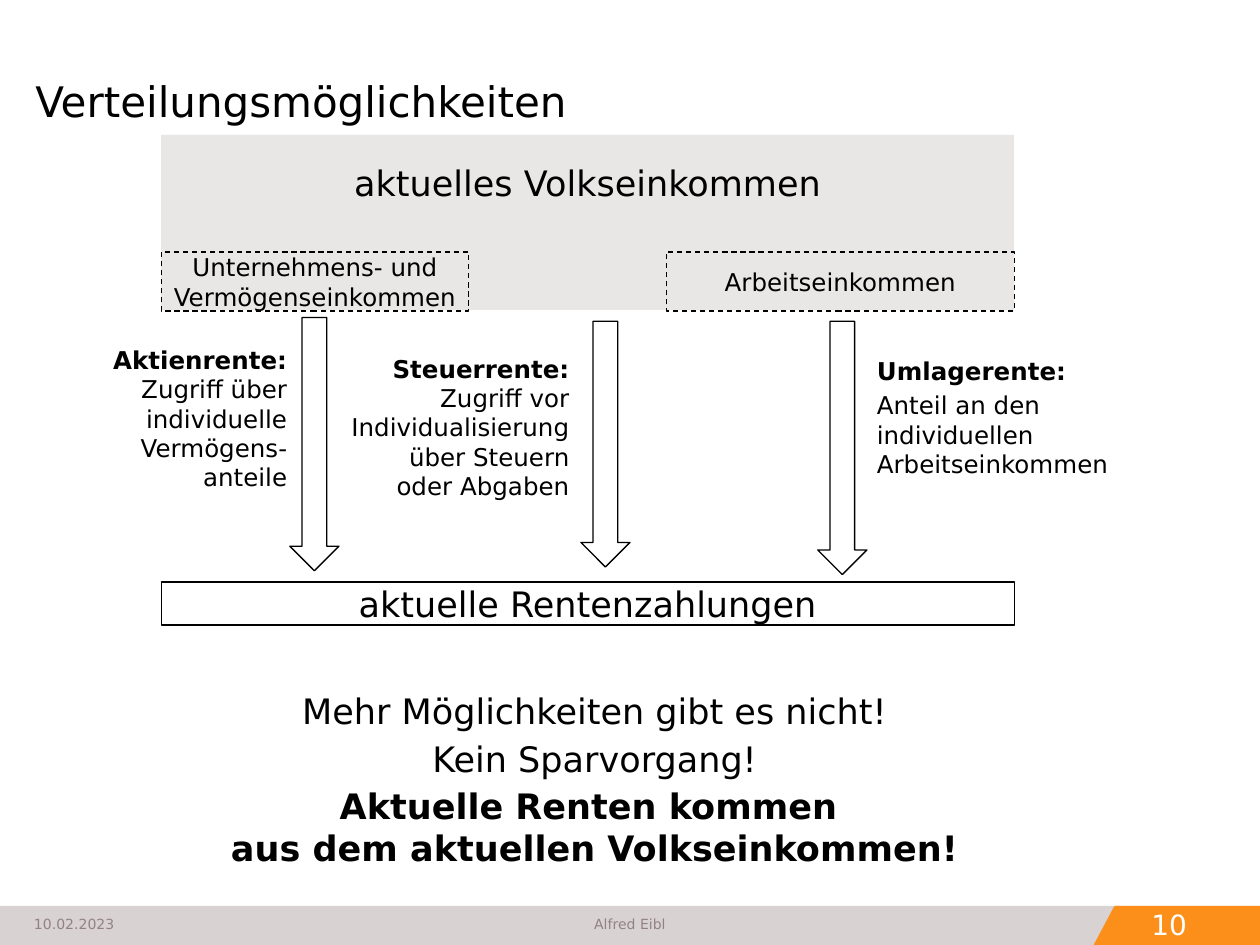
from dataclasses import dataclass
from pptx import Presentation
from pptx.dml.color import RGBColor as RGB
from pptx.enum.dml import MSO_LINE as Dash
from pptx.enum.shapes import MSO_SHAPE as Kind
from pptx.enum.text import MSO_ANCHOR as Anchor, MSO_AUTO_SIZE as Fit, PP_ALIGN as Align
from pptx.util import Inches, Pt


@dataclass(frozen=True)
class Theme:
    font: str = "DejaVu Sans"
    ink: str = "000000"
    mute: str = "928285"
    white: str = "FFFFFF"
    bar: str = "D8D2D2"
    accent: str = "FB8F19"
    panel: str = "E9E6E6"
    head: int = 24
    big: int = 20
    page: int = 16
    body: int = 14
    foot: int = 8


look = Theme()
deck = Presentation()
deck.slide_width, deck.slide_height = Inches(10), Inches(7.5)
col, row = deck.slide_width / 100, deck.slide_height / 75
slide = deck.slides.add_slide(deck.slide_layouts[5])
shapes = slide.shapes


def draw(kind, x, y, w, h, fill=None, dash=None):
    """Add a shape on the grid: filled without a line, or outlined without a fill."""
    box = shapes.add_shape(kind, int(x * col), int(y * row), int(w * col), int(h * row))
    box.shadow.inherit = False
    if fill:
        box.fill.solid()
        box.fill.fore_color.rgb = RGB.from_string(fill)
        box.line.fill.background()
    else:
        box.fill.background()
        box.line.color.rgb = RGB.from_string(look.ink)
        box.line.width = Pt(0.75)
        if dash:
            box.line.dash_style = dash
    return box


def write(box, paras, size, align=Align.CENTER, anchor=Anchor.MIDDLE, tint=look.ink, after=3):
    """Fill a box; each paragraph is a list of lines, and * marks a bold line."""
    frame = box.text_frame
    frame.auto_size, frame.word_wrap = Fit.NONE, True
    frame.vertical_anchor = anchor
    frame.margin_left = frame.margin_right = frame.margin_top = frame.margin_bottom = 0
    for i, lines in enumerate(paras):
        para = frame.add_paragraph() if i else frame.paragraphs[0]
        para.alignment, para.space_after = align, Pt(after)
        para.font.name, para.font.size = look.font, Pt(size)
        para.font.color.rgb = RGB.from_string(tint)
        for j, line in enumerate(lines):
            if j:
                para.add_line_break()
            run = para.add_run()
            run.text = line.removeprefix("*")
            run.font.bold = line.startswith("*")


# Footer band and income panel
draw(Kind.RECTANGLE, 0, 71.9, 100, 3.1, look.bar)
draw(Kind.RECTANGLE, 88.5, 71.9, 11.5, 3.1, look.accent)
draw(Kind.ISOSCELES_TRIANGLE, 86.8, 71.9, 3.3, 3.1, look.accent)
left, wide = 12.8, 67.7
draw(Kind.RECTANGLE, left, 10.7, wide, 13.9, look.panel)

title = shapes.title
title.left, title.top = int(2.8 * col), int(2.1 * row)
title.width, title.height = int(79 * col), int(7.9 * row)
write(title, [["Verteilungsmöglichkeiten"]], look.head, Align.LEFT, Anchor.BOTTOM, after=0)

# Outlined boxes
for x, y, w, h, text, size, dash in [
    (52.9, 20, 27.6, 4.7, "Arbeitseinkommen", look.body, Dash.DASH),
    (left, 20, 24.4, 4.7, "Unternehmens- und Vermögenseinkommen", look.body, Dash.DASH),
    (left, 46.2, wide, 3.4, "aktuelle Rentenzahlungen", look.big, None),
]:
    write(draw(Kind.RECTANGLE, x, y, w, h, dash=dash), [[text]], size)

for x, y, h in [(46.1, 25.5, 19.5), (64.9, 25.5, 20.1), (23, 25.2, 20.1)]:
    draw(Kind.DOWN_ARROW, x, y, 3.9, h)

# Free text: place, paragraphs, size, alignment, colour
for place, paras, size, align, tint in [
    ((left, 12.8, wide, 3.4), [["aktuelles Volkseinkommen"]], look.big, Align.CENTER, look.ink),
    ((8.6, 27.3, 14.2, 11.8),
     [["*Aktienrente:", "Zugriff über individuelle Vermögens-anteile"]],
     look.body, Align.RIGHT, look.ink),
    ((69.6, 28.2, 21.3, 9.8),
     [["*Umlagerente:"], ["Anteil an den individuellen Arbeitseinkommen"]],
     look.body, Align.LEFT, look.ink),
    ((27.2, 28, 18, 11.8),
     [["*Steuerrente:", "Zugriff vor Individualisierung über Steuern", "oder Abgaben"]],
     look.body, Align.RIGHT, look.ink),
    ((4.3, 54.7, 85.8, 14.3),
     [["Mehr Möglichkeiten gibt es nicht!"], ["Kein Sparvorgang!"],
      ["*Aktuelle Renten kommen ", "*aus dem aktuellen Volkseinkommen!"]],
     look.big, Align.CENTER, look.ink),
]:
    x, y, w, h = place
    box = shapes.add_textbox(int(x * col), int(y * row), int(w * col), int(h * row))
    write(box, paras, size, align, tint=tint)

# Footer text
for x, w, text, size, align, tint in [
    (2.7, 8, "10.02.2023", look.foot, Align.LEFT, look.mute),
    (45, 10, "Alfred Eibl", look.foot, Align.CENTER, look.mute),
    (89.2, 5, "10", look.page, Align.RIGHT, look.white),
]:
    box = shapes.add_textbox(int(x * col), int(71.7 * row), int(w * col), int(3.3 * row))
    write(box, [[text]], size, align, tint=tint, after=0)

deck.save("out.pptx")
